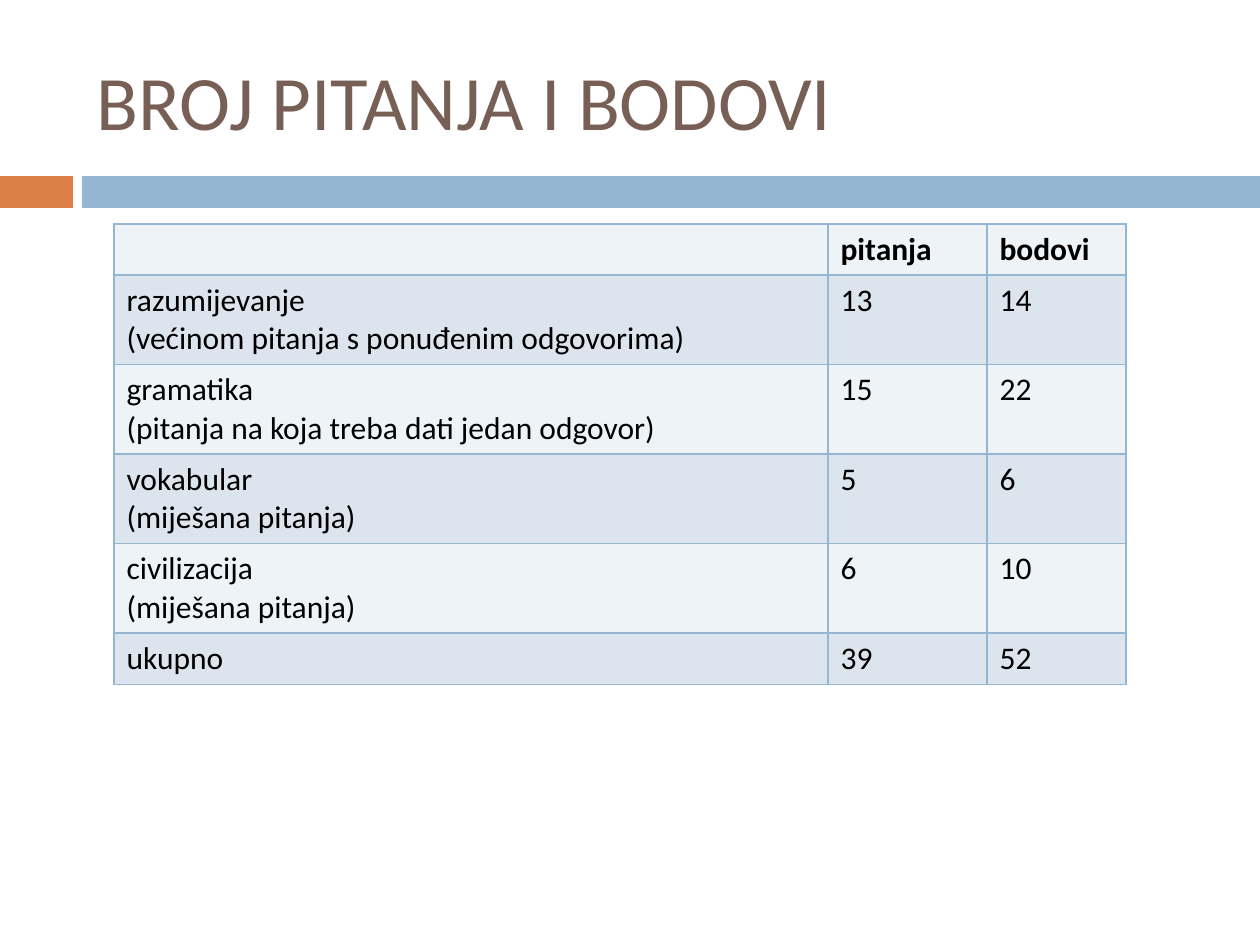
from lxml import etree
from pptx import Presentation
from pptx import util as u
from pptx.dml.color import RGBColor
from pptx.enum import shapes, text
from pptx.oxml import ns

PX = 914400 // 126
FONT = "Calibri"
BLUE, ORANGE, BROWN, BLACK = "94B6D2", "DD8047", "775F55", "000000"
BANDS = ("EEF3F7", "DCE5EE")


def rgb(value):
    return RGBColor.from_string(value)


def px(*values):
    return [u.Emu(v * PX) for v in values]


class Deck:
    def __init__(self, prs):
        self.slide = prs.slides.add_slide(prs.slide_layouts[5])

    def run(self, p, words, size, color, bold=False):
        r = p.add_run()
        r.text = words
        r.font.name, r.font.size, r.font.bold = FONT, u.Pt(size), bold
        r.font.color.rgb = rgb(color)

    def title(self, words, *box):
        sp = self.slide.shapes.title
        sp.left, sp.top, sp.width, sp.height = px(*box)
        tf = sp.text_frame
        tf.word_wrap = True
        tf.auto_size = text.MSO_AUTO_SIZE.NONE
        tf.vertical_anchor = text.MSO_ANCHOR.MIDDLE
        p = tf.paragraphs[0]
        p.alignment = text.PP_ALIGN.LEFT
        self.run(p, words, 44, BROWN)

    def bar(self, color, *box):
        sp = self.slide.shapes.add_shape(shapes.MSO_SHAPE.RECTANGLE, *px(*box))
        sp.shadow.inherit = False
        sp.fill.solid()
        sp.fill.fore_color.rgb = rgb(color)
        sp.line.fill.background()

    def borders(self, cell):
        pr = cell._tc.get_or_add_tcPr()
        for i, side in enumerate(("lnL", "lnR", "lnT", "lnB")):
            ln = etree.Element(ns.qn(f"a:{side}"), w=str(u.Pt(1)))
            fill = etree.SubElement(ln, ns.qn("a:solidFill"))
            etree.SubElement(fill, ns.qn("a:srgbClr"), val=BLUE)
            pr.insert(i, ln)

    def cell(self, cell, lines, fill, bold):
        cell.fill.solid()
        cell.fill.fore_color.rgb = rgb(fill)
        self.borders(cell)
        tf = cell.text_frame
        for i, line in enumerate(lines):
            p = tf.add_paragraph() if i else tf.paragraphs[0]
            self.run(p, line, 18, BLACK, bold)

    def table(self, rows, left, top, widths, line_heights):
        heights = [line_heights[max(map(len, row)) - 1] for row in rows]
        box = px(left, top, sum(widths), sum(heights))
        tbl = self.slide.shapes.add_table(len(rows), len(widths), *box).table
        for col, width in zip(tbl.columns, px(*widths)):
            col.width = width
        for i, (row, height) in enumerate(zip(rows, px(*heights))):
            tbl.rows[i].height = height
            for j, lines in enumerate(row):
                self.cell(tbl.cell(i, j), lines, BANDS[i % 2], i == 0)


ROWS = [
    ([], ["pitanja"], ["bodovi"]),
    (["razumijevanje", "(većinom pitanja s ponuđenim odgovorima)"], ["13"], ["14"]),
    (["gramatika", "(pitanja na koja treba dati jedan odgovor)"], ["15"], ["22"]),
    (["vokabular", "(miješana pitanja)"], ["5"], ["6"]),
    (["civilizacija", "(miješana pitanja)"], ["6"], ["10"]),
    (["ukupno"], ["39"], ["52"]),
]


def main():
    prs = Presentation()
    prs.slide_width, prs.slide_height = u.Inches(10), u.Inches(7.5)
    deck = Deck(prs)
    deck.bar(ORANGE, 0, 176, 73, 32)
    deck.bar(BLUE, 82, 176, 1178, 32)
    deck.title("BROJ PITANJA I BODOVI", 84, 32, 1124, 136)
    deck.table(ROWS, 114, 224, (714, 159, 139), (51, 89))
    prs.save("out.pptx")


if __name__ == "__main__":
    main()
